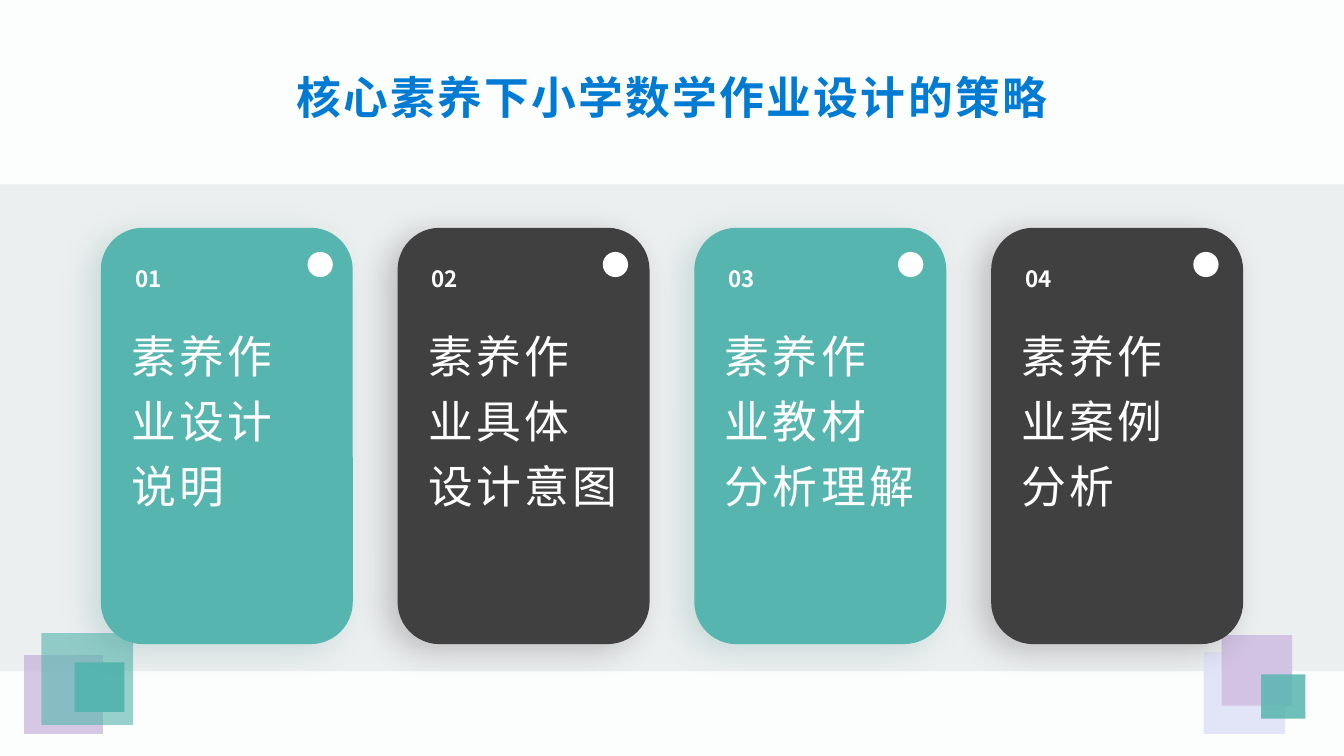
from dataclasses import dataclass

from lxml.etree import SubElement
from pptx import Presentation
from pptx.dml.color import RGBColor
from pptx.enum.shapes import MSO_SHAPE as Preset
from pptx.enum.text import MSO_ANCHOR as Anchor, MSO_AUTO_SIZE as AutoSize, PP_ALIGN as Align
from pptx.oxml.ns import qn
from pptx.shapes.autoshape import Shape
from pptx.shapes.shapetree import GroupShapes, SlideShapes
from pptx.slide import Slide
from pptx.text.text import Font, TextFrame, _Paragraph as Paragraph
from pptx.util import Emu, Inches, Pt

SLIDE_WIDTH = Inches(13.333)
SLIDE_HEIGHT = Inches(7.5)
ASPECT = SLIDE_WIDTH / SLIDE_HEIGHT


@dataclass(frozen=True)
class Theme:
    font: str = "Noto Sans CJK SC"
    page: str = "FCFDFD"
    band: str = "ECEFEF"
    teal: str = "57B5AF"
    teal_shadow: str = "3D8C87"
    dark: str = "404040"
    dark_shadow: str = "000000"
    white: str = "FFFFFF"
    purple: str = "BCA5D4"
    lilac: str = "D3C3E3"
    periwinkle: str = "E1E5F7"
    title_start: str = "007BD3"
    title_end: str = "034373"
    large: int = 32
    small: int = 16
    title_tracking: float = 1.6
    body_tracking: float = 2.4


THEME = Theme()


@dataclass(frozen=True)
class Area:
    """Shares of the slide's width and height, in percent."""

    left: float
    top: float
    width: float
    height: float

    def lengths(self) -> tuple[Emu, Emu, Emu, Emu]:
        return (
            Emu(round(self.left * SLIDE_WIDTH / 100)),
            Emu(round(self.top * SLIDE_HEIGHT / 100)),
            Emu(round(self.width * SLIDE_WIDTH / 100)),
            Emu(round(self.height * SLIDE_HEIGHT / 100)),
        )

    def shifted(self, distance: float) -> "Area":
        return Area(self.left + distance, self.top, self.width, self.height)


@dataclass(frozen=True)
class Square:
    left: float
    top: float
    side: float
    color: str
    opacity: int = 100

    def area(self) -> Area:
        return Area(self.left, self.top, self.side, self.side * ASPECT)


@dataclass(frozen=True)
class Card:
    number: str
    caption: str
    fill: str
    shadow: str


TITLE = "核心素养下小学数学作业设计的策略"
CARDS = (
    Card("01", "素养作业设计说明", THEME.teal, THEME.teal_shadow),
    Card("02", "素养作业具体设计意图", THEME.dark, THEME.dark_shadow),
    Card("03", "素养作业教材分析理解", THEME.teal, THEME.teal_shadow),
    Card("04", "素养作业案例分析", THEME.dark, THEME.dark_shadow),
)
CORNERS = (
    (
        Square(1.8, 86.67, 5.85, THEME.purple, 60),
        Square(3.08, 83.73, 6.83, THEME.teal, 61),
        Square(5.55, 87.6, 3.7, THEME.teal),
    ),
    (
        Square(89.55, 86.27, 6.08, THEME.periwinkle),
        Square(90.9, 84, 5.25, THEME.lilac),
        Square(93.83, 89.2, 3.3, THEME.teal, 85),
    ),
)

TITLE_AREA = Area(7.5, 7.87, 85, 9.87)
BAND_AREA = Area(0, 24.4, 100, 64.4)
CARD_AREA = Area(7.5, 30.13, 18.75, 55.07)
CAPTION_AREA = Area(9.03, 41.47, 15.68, 41.07)
NUMBER_AREA = Area(8.63, 34.27, 4.8, 5.2)
DOT_AREA = Area(22.88, 33.33, 1.88, 3.33)
CARD_PITCH = (100 - 2 * CARD_AREA.left - CARD_AREA.width) / (len(CARDS) - 1)
DOT_PITCH = 21.97


def color(value: str) -> RGBColor:
    return RGBColor.from_string(value)


def add_block(shapes: SlideShapes | GroupShapes, preset: Preset, area: Area,
              fill: str, opacity: int = 100) -> Shape:
    block = shapes.add_shape(preset, *area.lengths())
    block.shadow.inherit = False
    block.fill.solid()
    block.fill.fore_color.rgb = color(fill)
    block.line.fill.background()
    if opacity < 100:
        tint = block.fill._xPr.find(qn("a:solidFill"))[0]
        SubElement(tint, qn("a:alpha"), val=str(opacity * 1000))
    return block


def add_shadow(block: Shape, shade: str) -> None:
    effects = block._element.spPr.find(qn("a:effectLst"))
    outer = SubElement(effects, qn("a:outerShdw"), blurRad=str(Pt(23)), dist=str(Pt(9)),
                       dir=str(150 * 60000), rotWithShape="0")
    tint = SubElement(outer, qn("a:srgbClr"), val=shade)
    SubElement(tint, qn("a:alpha"), val="20000")


def style_text(para: Paragraph, size: int, bold: bool, tracking: float = 0) -> Font:
    span = para.runs[0]
    span.font.name = THEME.font
    span.font.size = Pt(size)
    span.font.bold = bold
    span.font.fill.solid()
    span.font.fill.fore_color.rgb = color(THEME.white)
    properties = span.font._element
    properties.set("spc", str(round(tracking * 100)))
    latin = properties.find(qn("a:latin"))
    east_asian = SubElement(properties, qn("a:ea"), typeface=THEME.font)
    latin.addnext(east_asian)
    return span.font


def add_text(page: Slide, area: Area, text: str) -> TextFrame:
    frame = page.shapes.add_textbox(*area.lengths()).text_frame
    frame.word_wrap = True
    frame.text = text
    return frame


def set_title(page: Slide) -> None:
    title = page.shapes.title
    title.left, title.top, title.width, title.height = TITLE_AREA.lengths()
    frame = title.text_frame
    frame.text = TITLE
    frame.word_wrap = True
    frame.auto_size = AutoSize.NONE
    frame.vertical_anchor = Anchor.MIDDLE
    frame.margin_left = frame.margin_right = Inches(0.07)
    frame.margin_top = frame.margin_bottom = Inches(0.03)
    para = frame.paragraphs[0]
    para.alignment = Align.CENTER
    font = style_text(para, THEME.large, True, THEME.title_tracking)
    font.fill.gradient()
    font.fill.gradient_angle = 0
    for stop, shade in zip(font.fill.gradient_stops, (THEME.title_start, THEME.title_end)):
        stop.color.rgb = color(shade)


def add_card(page: Slide, card: Card, index: int) -> None:
    offset = index * CARD_PITCH
    panel = add_block(page.shapes, Preset.ROUNDED_RECTANGLE, CARD_AREA.shifted(offset), card.fill)
    add_shadow(panel, card.shadow)

    caption = add_text(page, CAPTION_AREA.shifted(offset), card.caption).paragraphs[0]
    caption.line_spacing = 1.2
    caption.space_after = Pt(8)
    style_text(caption, THEME.large, False, THEME.body_tracking)

    label = add_text(page, NUMBER_AREA.shifted(offset), card.number)
    label.vertical_anchor = Anchor.MIDDLE
    label.paragraphs[0].alignment = Align.CENTER
    style_text(label.paragraphs[0], THEME.small, True)
    add_block(page.shapes, Preset.OVAL, DOT_AREA.shifted(index * DOT_PITCH), THEME.white)


def main() -> None:
    deck = Presentation()
    deck.slide_width, deck.slide_height = SLIDE_WIDTH, SLIDE_HEIGHT
    page = deck.slides.add_slide(deck.slide_layouts.get_by_name("Title Only"))
    page.background.fill.solid()
    page.background.fill.fore_color.rgb = color(THEME.page)
    add_block(page.shapes, Preset.RECTANGLE, BAND_AREA, THEME.band)
    for corner in CORNERS:
        group = page.shapes.add_group_shape()
        for square in corner:
            add_block(group.shapes, Preset.RECTANGLE, square.area(), square.color, square.opacity)
    set_title(page)
    for index, card in enumerate(CARDS):
        add_card(page, card, index)
    deck.save("out.pptx")


if __name__ == "__main__":
    main()
